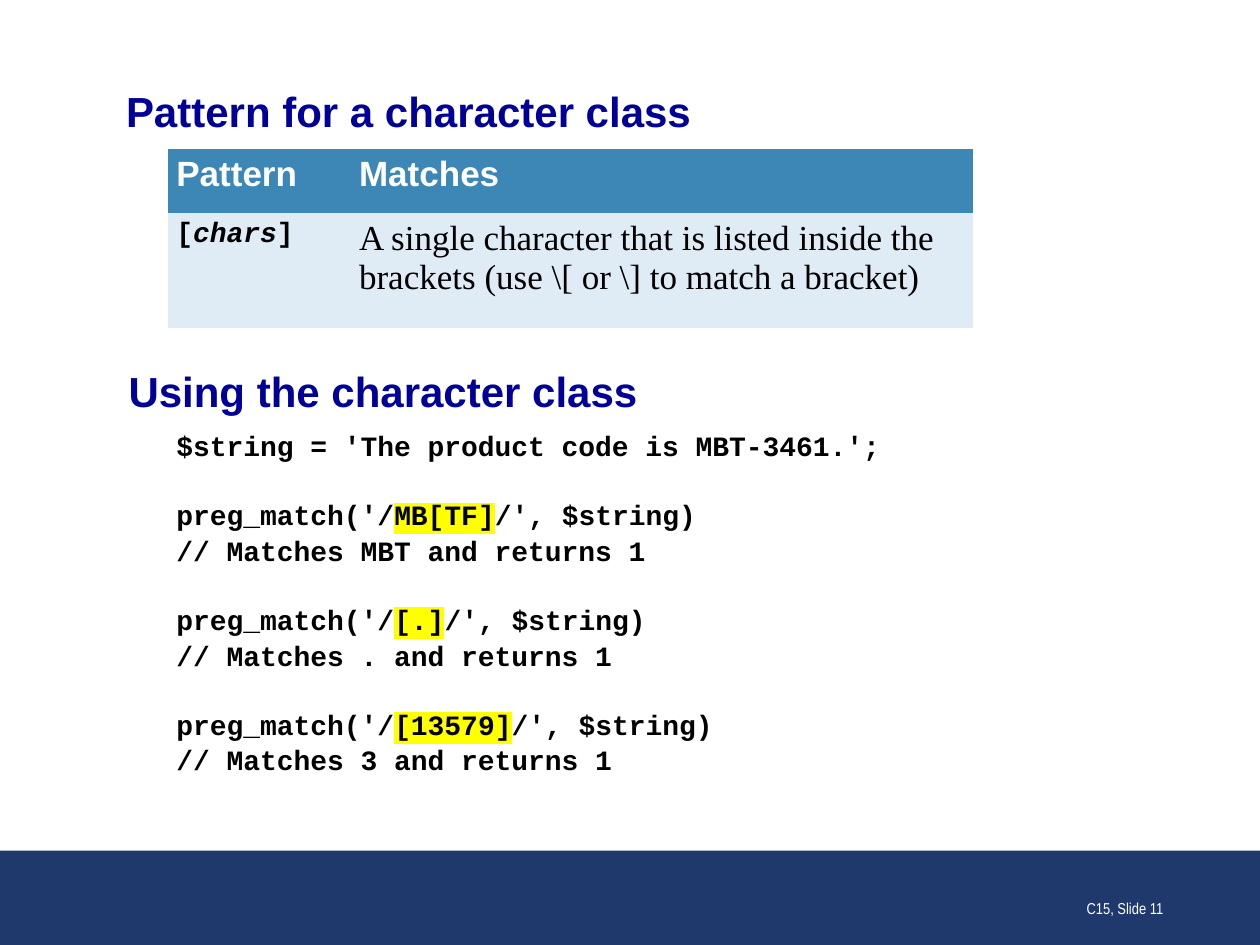
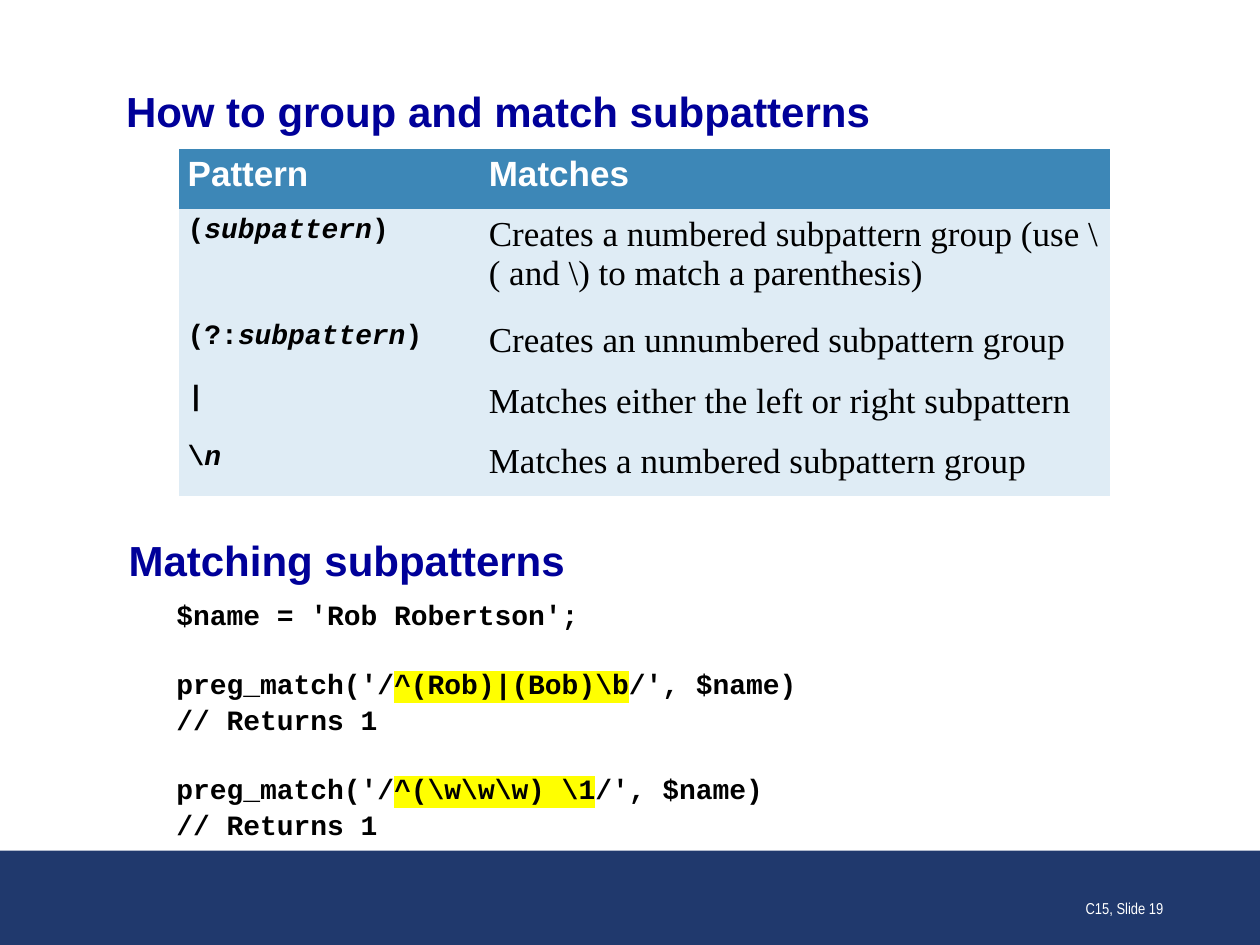
"""Build two slides on character classes and subpatterns in regular expressions."""
from lxml.etree import SubElement as Sub
from pptx import Presentation
from pptx.dml.color import RGBColor as RGB
from pptx.enum.shapes import MSO_SHAPE as Shape
from pptx.enum.text import MSO_ANCHOR as Anchor, MSO_AUTO_SIZE as Fit, PP_ALIGN as Align
from pptx.oxml.ns import qn
from pptx.util import Inches, Pt

HUES = {
    "title": "000099",
    "band": "20396D",
    "head": "3D87B7",
    "row": "DFECF5",
    "mark": "FFFF00",
    "text": "000000",
    "white": "FFFFFF",
}
PLAIN = "{2D5ABB26-0587-4C30-8999-92F81FD0307C}"
PITCH = 1.06
GAP = 19.2

DECK = [
    {
        "title": "Pattern for a character class",
        "left": 1.33,
        "cols": [1.45, 4.94],
        "tall": [0.51, 0.91],
        "rows": [
            ("[~chars~]", r"A single character that is listed inside the brackets (use \[ or \] to match a bracket)"),
        ],
        "top": 2.83,
        "head": "Using the character class",
        "code": [
            "$string = 'The product code is MBT-3461.';",
            "preg_match('/~MB[TF]~/', $string)",
            "// Matches MBT and returns 1",
            "preg_match('/~[.]~/', $string)",
            "// Matches . and returns 1",
            "preg_match('/~[13579]~/', $string)",
            "// Matches 3 and returns 1",
        ],
        "page": "C15, Slide 11",
    },
    {
        "title": "How to group and match subpatterns",
        "left": 1.42,
        "cols": [2.39, 5],
        "tall": [0.48, 0.84, 0.48, 0.48, 0.48],
        "rows": [
            ("(~subpattern~)", r"Creates a numbered subpattern group (use \( and \) to match a parenthesis)"),
            ("(?:~subpattern~)", "Creates an unnumbered subpattern group"),
            ("|", "Matches either the left or right subpattern"),
            ("\\~n~", "Matches a numbered subpattern group"),
        ],
        "top": 4.17,
        "head": "Matching subpatterns",
        "code": [
            "$name = 'Rob Robertson';",
            "preg_match('/~^(Rob)|(Bob)\\b~/', $name)",
            "// Returns 1",
            "preg_match('/~^(\\w\\w\\w) \\1~/', $name)",
            "// Returns 1",
        ],
        "page": "C15, Slide 19",
    },
]


def write(para, text, face, size, hue, bold=True, mark=False):
    """Add runs to a paragraph; parts between tildes are marked or italic."""
    for num, part in enumerate(text.split("~")):
        if not part:
            continue
        run = para.add_run()
        run.text = part
        font = run.font
        font.size, font.bold, font.name = Pt(size), bold, face
        font.color.rgb = RGB.from_string(HUES[hue])
        font.italic = num % 2 == 1 and not mark
        if num % 2 and mark:
            props = font._element
            light = Sub(props, qn("a:highlight"))
            Sub(light, qn("a:srgbClr"), val=HUES["mark"])
            props.find(qn("a:latin")).addprevious(light)


def place(shape, left, top, width, height):
    """Move and size a shape in inches."""
    shape.left, shape.top = Inches(left), Inches(top)
    shape.width, shape.height = Inches(width), Inches(height)


prs = Presentation()
prs.slide_width, prs.slide_height = Inches(10), Inches(7.5)

for item in DECK:
    slide = prs.slides.add_slide(prs.slide_layouts[1])

    band = slide.shapes.add_shape(Shape.RECTANGLE, 0, Inches(6.75), Inches(10), Inches(0.75))
    band.shadow.inherit = False
    band.fill.solid()
    band.fill.fore_color.rgb = RGB.from_string(HUES["band"])
    band.line.fill.background()

    title = slide.shapes.title
    place(title, 1, 0.68, 8, 0.4)
    frame = title.text_frame
    frame.margin_left = frame.margin_right = frame.margin_top = frame.margin_bottom = 0
    frame.vertical_anchor = Anchor.MIDDLE
    frame.auto_size = Fit.NONE
    para = frame.paragraphs[0]
    para.alignment = Align.LEFT
    write(para, item["title"], "Arial", 24, "title")

    rows = [("Pattern", "Matches")] + item["rows"]
    grid = slide.shapes.add_table(
        len(rows), 2, Inches(item["left"]), Inches(1.18),
        Inches(sum(item["cols"])), Inches(sum(item["tall"])),
    ).table
    grid._tbl.tblPr.find(qn("a:tableStyleId")).text = PLAIN
    for col, width in zip(grid.columns, item["cols"]):
        col.width = Inches(width)
    for r, (row, height) in enumerate(zip(rows, item["tall"])):
        grid.rows[r].height = Inches(height)
        for c, text in enumerate(row):
            cell = grid.cell(r, c)
            cell.margin_left = cell.margin_right = Inches(0.07)
            cell.margin_top = cell.margin_bottom = Inches(0.05)
            cell.fill.solid()
            cell.fill.fore_color.rgb = RGB.from_string(HUES["row" if r else "head"])
            para = cell.text_frame.paragraphs[0]
            para.space_after = Pt(6)
            if r == 0:
                write(para, text, "Arial", 20, "white")
            elif c == 0:
                write(para, text, "Courier New", 16, "text")
            else:
                write(para, text, "Times New Roman", 20, "text", bold=False)

    body = slide.placeholders[1]
    place(body, 0.92, item["top"], 8.08, 2.42)
    frame = body.text_frame
    frame.auto_size = Fit.NONE
    for num, text in enumerate([item["head"]] + item["code"]):
        para = frame.add_paragraph() if num else frame.paragraphs[0]
        props = para._p.get_or_add_pPr()
        props.set("marL", str(Inches(0.38 if num else 0)))
        props.set("indent", "0")
        Sub(props, qn("a:buNone"))
        para.line_spacing = PITCH
        para.space_before = Pt(GAP if text.startswith("preg_match") else 0)
        para.space_after = Pt(0 if num else 6)
        if num:
            write(para, text, "Courier New", 16, "text", mark=True)
        else:
            write(para, text, "Arial", 24, "title")

    foot = slide.shapes.add_textbox(Inches(7.25), Inches(6.83), Inches(2.08), Inches(0.5))
    frame = foot.text_frame
    frame.word_wrap = True
    frame.vertical_anchor = Anchor.BOTTOM
    para = frame.paragraphs[0]
    para.alignment = Align.RIGHT
    write(para, item["page"], "Arial Narrow", 9, "white", bold=False)

prs.save("out.pptx")
